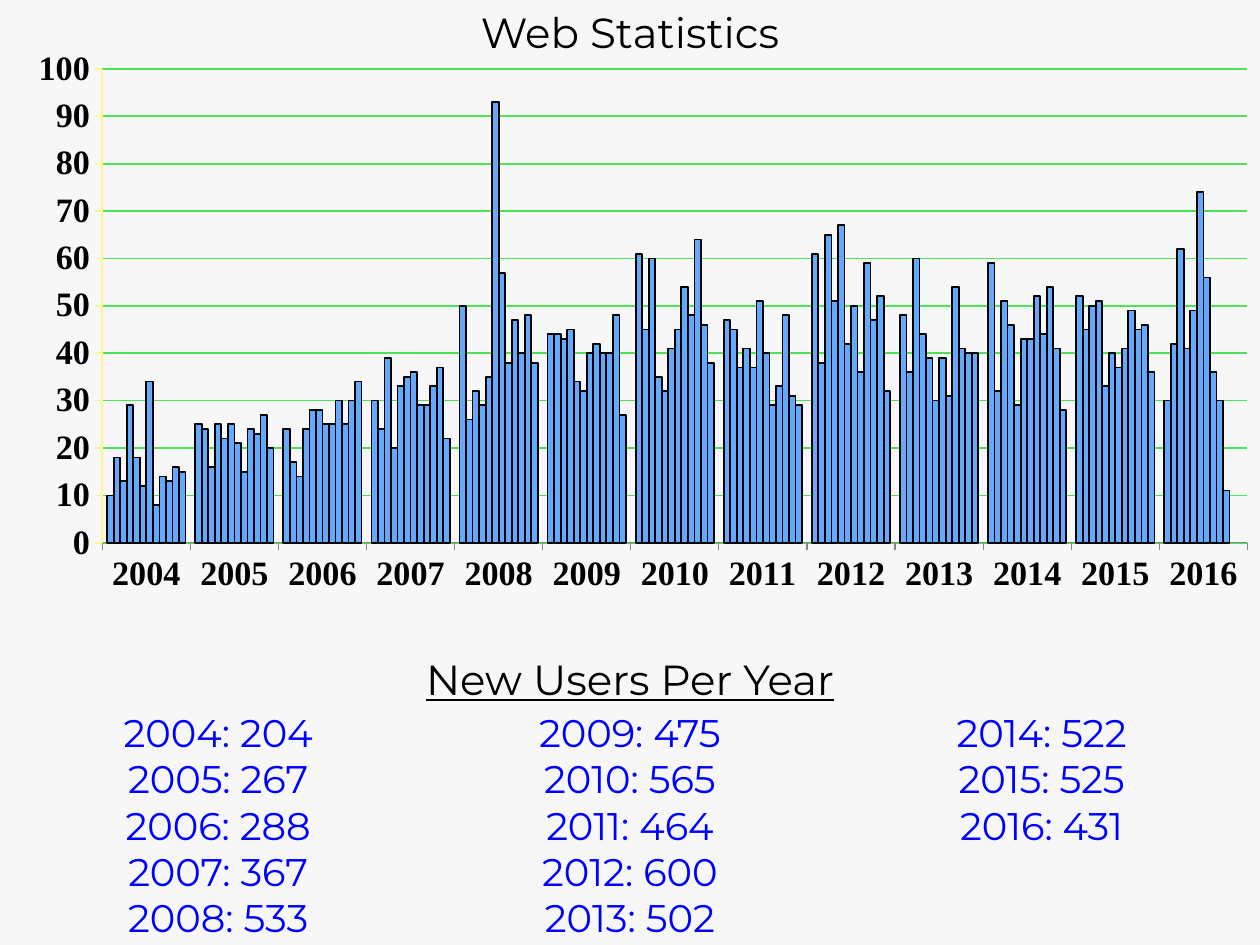
from typing import NamedTuple

from lxml import etree
from pptx import Presentation
from pptx.chart.data import CategoryChartData
from pptx.dml.color import RGBColor
from pptx.enum import chart as ch, text as tx
from pptx.oxml.ns import qn
from pptx.util import Inches, Pt

SANS, SERIF = "Montserrat", "Times New Roman"
BLACK, BLUE, BAR = "000000", "0000FF", "63AAFE"
GRID, AXIS, BACKGROUND = "4EE257", "FFF58C", "F7F7F7"


class Box(NamedTuple):
    left: float
    top: float
    width: float
    height: float


class YearTotal(NamedTuple):
    year: int
    users: int


FIRST_YEAR = 2004
USERS = [204, 267, 288, 367, 533, 475, 565, 464, 600, 502, 522, 525, 431]
TOTALS = [YearTotal(FIRST_YEAR + i, users) for i, users in enumerate(USERS)]
MONTHS = [
    [10, 25, 24, 30, 50, 44, 61, 47, 61, 48, 59, 52, 30],
    [18, 24, 17, 24, 26, 44, 45, 45, 38, 36, 32, 45, 42],
    [13, 16, 14, 39, 32, 43, 60, 37, 65, 60, 51, 50, 62],
    [29, 25, 24, 20, 29, 45, 35, 41, 51, 44, 46, 51, 41],
    [18, 22, 28, 33, 35, 34, 32, 37, 67, 39, 29, 33, 49],
    [12, 25, 28, 35, 93, 32, 41, 51, 42, 30, 43, 40, 74],
    [34, 21, 25, 36, 57, 40, 45, 40, 50, 39, 43, 37, 56],
    [8, 15, 25, 29, 38, 42, 54, 29, 36, 31, 52, 41, 36],
    [14, 24, 30, 29, 47, 40, 48, 33, 59, 54, 44, 49, 30],
    [13, 23, 25, 33, 40, 40, 64, 48, 47, 41, 54, 45, 11],
    [16, 27, 30, 37, 48, 48, 46, 31, 52, 40, 41, 46, None],
    [15, 20, 34, 22, 38, 27, 38, 29, 32, 40, 28, 36, None],
]


def rgb(value: str) -> RGBColor:
    return RGBColor.from_string(value)


def inches(box: Box) -> list:
    return [Inches(length) for length in box]


def set_line(line, color: str) -> None:
    line.color.rgb = rgb(color)
    line.width = Pt(1)


def set_font(font, name: str, size: float, color: str, bold: bool = False) -> None:
    font.name = name
    font.size = Pt(size)
    font.bold = bold
    font.color.rgb = rgb(color)


def write_lines(shape, lines: list[str], size: float, color: str, grow: bool) -> None:
    frame = shape.text_frame
    frame.text = "\n".join(lines)
    frame.word_wrap = True
    frame.vertical_anchor = tx.MSO_ANCHOR.TOP
    fit = tx.MSO_AUTO_SIZE
    frame.auto_size = fit.SHAPE_TO_FIT_TEXT if grow else fit.NONE
    for paragraph in frame.paragraphs:
        paragraph.alignment = tx.PP_ALIGN.CENTER
        paragraph.line_spacing = 1.0
        paragraph.space_before = Pt(0)
        set_font(paragraph.font, SANS, size, color)


def add_title(slide, box: Box, wording: str) -> None:
    title = slide.shapes.title
    title.left, title.top, title.width, title.height = inches(box)
    write_lines(title, [wording], 24, BLACK, True)


def set_plot_area(chart, box: Box) -> None:
    plot_area = chart._chartSpace.chart.plotArea
    for old in plot_area.findall(qn("c:layout")):
        plot_area.remove(old)
    layout = etree.Element(qn("c:layout"))
    manual = etree.SubElement(layout, qn("c:manualLayout"))
    settings = [("layoutTarget", "inner"), ("xMode", "edge"), ("yMode", "edge")]
    settings += zip("xywh", box)
    for tag, value in settings:
        etree.SubElement(manual, qn(f"c:{tag}")).set("val", str(value))
    plot_area.insert(0, layout)


def add_monthly_chart(slide, box: Box) -> None:
    data = CategoryChartData()
    data.categories = [str(total.year) for total in TOTALS]
    for number, values in enumerate(MONTHS, 1):
        data.add_series(f"Series {number}", values)
    kind = ch.XL_CHART_TYPE.COLUMN_CLUSTERED
    chart = slide.shapes.add_chart(kind, *inches(box), data).chart
    chart.has_legend = False
    chart.has_title = False
    set_font(chart.font, SERIF, 19.5, BLACK, True)
    set_plot_area(chart, Box(0.07, 0.06, 0.92, 0.76))

    plot = chart.plots[0]
    plot.gap_width = 150
    plot.overlap = 0
    plot.vary_by_categories = False
    for month in plot.series:
        month.invert_if_negative = False
        month.format.fill.solid()
        month.format.fill.fore_color.rgb = rgb(BAR)
        set_line(month.format.line, BLACK)

    years, users = chart.category_axis, chart.value_axis
    for axis in (years, users):
        axis.major_tick_mark = ch.XL_TICK_MARK.OUTSIDE
        axis.minor_tick_mark = ch.XL_TICK_MARK.NONE
        set_font(axis.tick_labels.font, SERIF, 19.5, BLACK, True)
    years.tick_label_position = ch.XL_TICK_LABEL_POSITION.LOW
    years.has_major_gridlines = False
    users.minimum_scale, users.maximum_scale, users.major_unit = 0, 100, 10
    users.has_major_gridlines = True
    set_line(users.major_gridlines.format.line, GRID)
    set_line(users.format.line, AXIS)


def add_year_totals(slide, box: Box, columns: int) -> None:
    totals = slide.shapes.add_textbox(*inches(box))
    lines = [f"{total.year}: {total.users}" for total in TOTALS]
    write_lines(totals, lines, 22, BLUE, False)
    totals.text_frame._txBody.bodyPr.set("numCol", str(columns))


def add_heading(slide, box: Box, wording: str) -> None:
    heading = slide.shapes.add_textbox(*inches(box))
    write_lines(heading, [wording], 24, BLACK, True)
    heading.text_frame.paragraphs[0].font.underline = True


def main() -> None:
    deck = Presentation()
    deck.slide_width, deck.slide_height = Inches(10), Inches(7.5)
    slide = deck.slides.add_slide(deck.slide_layouts[5])
    slide.background.fill.solid()
    slide.background.fill.fore_color.rgb = rgb(BACKGROUND)
    add_title(slide, Box(0, 0, 10, 0.5), "Web Statistics")
    add_monthly_chart(slide, Box(0.12, 0.25, 9.88, 4.95))
    add_year_totals(slide, Box(0, 5.58, 10, 1.86), 3)
    add_heading(slide, Box(0, 5.14, 10, 0.5), "New Users Per Year")
    deck.save("out.pptx")


if __name__ == "__main__":
    main()
